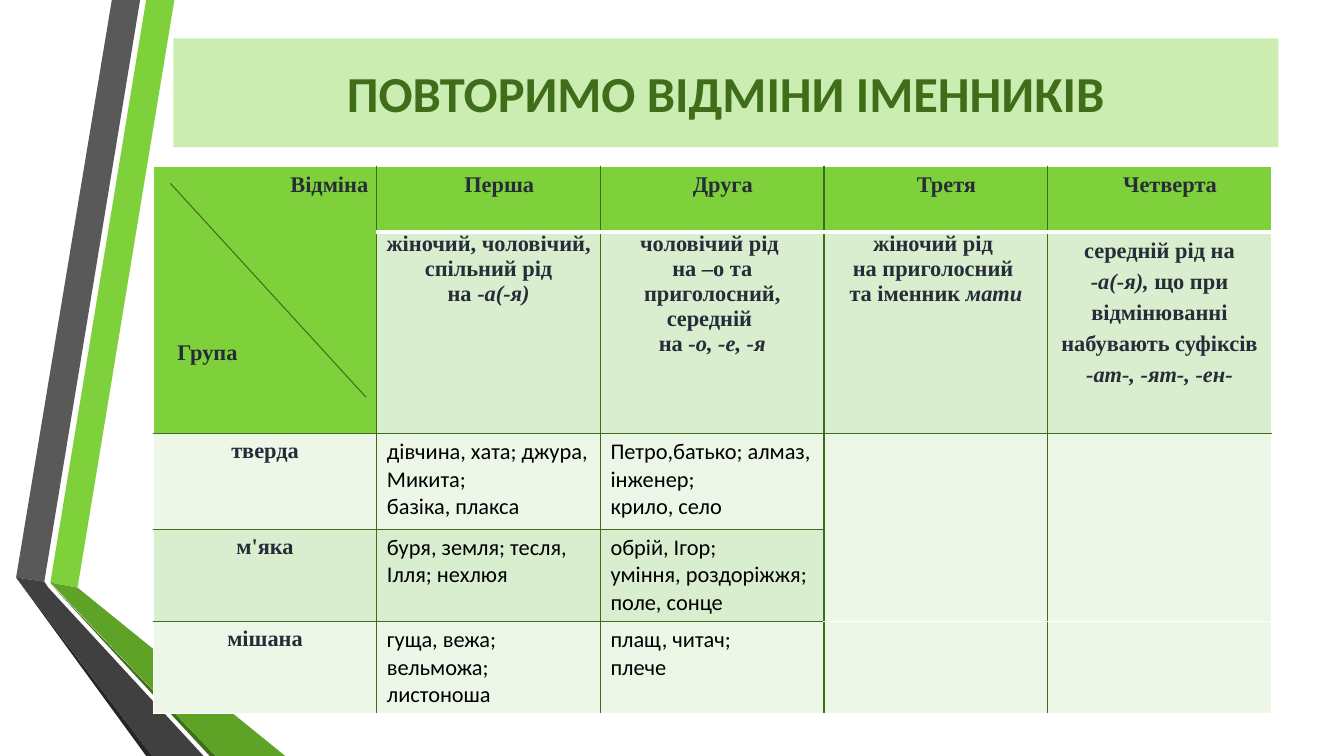
import pptx
import pptx.dml.color
import pptx.enum.shapes
import pptx.enum.text
import pptx.oxml.ns
import pptx.util
from lxml import etree

Inches, Pt = pptx.util.Inches, pptx.util.Pt
ALIGN = pptx.enum.text.PP_ALIGN

GREEN, DARK_GREEN, INK = "7FD13B", "3F6D19", "272D38"
MEDIUM, PALE, WHITE, BLACK = "D8EECE", "ECF7E8", "FFFFFF", "000000"

RIBBONS = [
    (GREEN, [(0.5, 5.78), (0.77, 5.83), (1.73, 0), (1.45, 0)]),
    ("595959", [(1.39, 0), (1.11, 0), (0.16, 5.73), (0.44, 5.77)]),
    ("262626", [(0.16, 5.73), (1.45, 7.5), (1.51, 7.5)]),
    (DARK_GREEN, [(0.5, 5.79), (2.08, 7.5), (2.14, 7.5)]),
    ("5FA326", [(0.5, 5.78), (2.14, 7.5), (2.83, 7.5), (0.77, 5.83)]),
    ("404040", [(2.02, 7.5), (0.48, 5.83), (0.44, 5.77), (0.16, 5.73), (1.51, 7.5)]),
]

TITLE = "ПОВТОРИМО ВІДМІНИ ІМЕННИКІВ"
CORNER = ["Відміна ", "Група"]
DECLENSIONS = ["Перша", "Друга", "Третя", "Четверта"]
# Asterisks enclose italic words.
RULES = [
    ["жіночий, чоловічий, спільний рід", "на *-а(-я)*"],
    ["чоловічий рід ", "на –о та приголосний, середній ", "на *-о, -е, -я*"],
    ["жіночий рід ", "на приголосний ", "та іменник *мати*"],
    ["середній рід на\n*-а(-я),* що при відмінюванні набувають суфіксів *-ат-, -ят-, -ен-*"],
]
GROUPS = [
    ("тверда", ["дівчина, хата; джура, Микита;", "базіка, плакса"],
     ["Петро,батько; алмаз, інженер;", "крило, село"]),
    ("м'яка", ["буря, земля; тесля, Ілля; нехлюя"],
     ["обрій, Ігор;", "уміння, роздоріжжя;", "поле, сонце"]),
    ("мішана", ["гуща, вежа; вельможа; листоноша"], ["плащ, читач;", "плече"]),
]
ROW_HEIGHTS = [0.65, 2.0, 0.95, 0.91, 0.91]
ROW_FILLS = [GREEN, MEDIUM, PALE, MEDIUM, PALE]
COLUMNS = 5
COLUMN_WIDTH = 2.218
MERGES = [((0, 0), (1, 0)), ((2, 3), (3, 3)), ((2, 4), (3, 4))]


def paint(target, color):
    target.solid()
    target.fore_color.rgb = pptx.dml.color.RGBColor.from_string(color)


def add_span(para, text, size, font, color, bold, italic=False):
    span = para.add_run()
    span.text = text
    span.font.size = Pt(size)
    span.font.name = font
    span.font.bold = bold
    span.font.italic = italic
    paint(span.font.fill, color)


def write_cell(cell, lines, align=ALIGN.CENTER, body=False, loose=False, indent=0):
    style = (16, "Calibri", BLACK, False) if body else (16, "Times New Roman", INK, True)
    frame = cell.text_frame
    for number, line in enumerate(lines):
        para = frame.add_paragraph() if number else frame.paragraphs[0]
        para.alignment = align
        if loose:
            para.line_spacing = 1.25
            para.space_before = Pt(2)
        if indent:
            properties = para._p.get_or_add_pPr()
            properties.set("marL", "0")
            properties.set("indent", str(Inches(indent)))
        for part_number, part in enumerate(line.split("*")):
            for piece_number, piece in enumerate(part.split("\n")):
                if piece_number:
                    para.add_line_break()
                if piece:
                    add_span(para, piece, *style, italic=part_number % 2 == 1)


def horizontal_border(boundary, column):
    if boundary == 1:
        return WHITE, 3
    white = boundary in (0, len(ROW_HEIGHTS)) or (boundary == 4 and column > 2)
    return (WHITE if white else DARK_GREEN), 1


def vertical_border(boundary):
    return (WHITE if boundary in (0, COLUMNS) else DARK_GREEN), 1


def add_borders(cell, row, column):
    bottom = row + (cell.span_height if cell.is_merge_origin else 1)
    borders = {
        "a:lnL": vertical_border(column),
        "a:lnR": vertical_border(column + 1),
        "a:lnT": horizontal_border(row, column),
        "a:lnB": horizontal_border(bottom, column),
    }
    qn = pptx.oxml.ns.qn
    properties = cell._tc.get_or_add_tcPr()
    for tag, (color, width) in borders.items():
        line = etree.SubElement(properties, qn(tag), w=str(Pt(width)))
        fill = etree.SubElement(line, qn("a:solidFill"))
        etree.SubElement(fill, qn("a:srgbClr"), val=color)


def add_ribbons(page):
    for color, corners in RIBBONS:
        points = [(Inches(x), Inches(y)) for x, y in corners]
        builder = page.shapes.build_freeform(*points[0])
        builder.add_line_segments(points[1:], close=True)
        ribbon = builder.convert_to_shape()
        ribbon.shadow.inherit = False
        paint(ribbon.fill, color)
        ribbon.line.fill.background()


def add_title(page):
    box = page.shapes.add_shape(pptx.enum.shapes.MSO_SHAPE.RECTANGLE,
                                Inches(1.72), Inches(0.38), Inches(10.96), Inches(1.08))
    box.shadow.inherit = False
    paint(box.fill, "CCEDB1")
    box.line.fill.background()
    box.text_frame.vertical_anchor = pptx.enum.text.MSO_ANCHOR.MIDDLE
    para = box.text_frame.paragraphs[0]
    para.alignment = ALIGN.CENTER
    add_span(para, TITLE, 36, "Calibri", DARK_GREEN, True)


def add_declension_table(page):
    table = page.shapes.add_table(
        len(ROW_HEIGHTS), COLUMNS, Inches(1.52), Inches(1.65),
        Inches(COLUMN_WIDTH * COLUMNS), Inches(sum(ROW_HEIGHTS))).table
    table.first_row = False
    table.horz_banding = False
    for column in table.columns:
        column.width = Inches(COLUMN_WIDTH)
    for row, height in zip(table.rows, ROW_HEIGHTS):
        row.height = Inches(height)
    for first, last in MERGES:
        table.cell(*first).merge(table.cell(*last))

    for row, color in enumerate(ROW_FILLS):
        for column in range(COLUMNS):
            cell = table.cell(row, column)
            if not cell.is_spanned:
                add_borders(cell, row, column)
            paint(cell.fill, PALE if row > 1 and column > 2 else color)
            if row < 2:
                cell.margin_left = cell.margin_right = Inches(0.03)
                cell.margin_top = cell.margin_bottom = 0

    corner = table.cell(0, 0)
    write_cell(corner, CORNER, ALIGN.LEFT, loose=True, indent=0.21)
    top, bottom = corner.text_frame.paragraphs
    top.alignment = ALIGN.RIGHT
    bottom.space_before = Pt(98)
    for column, (name, rule) in enumerate(zip(DECLENSIONS, RULES), start=1):
        write_cell(table.cell(0, column), [name], loose=True, indent=0.21)
        write_cell(table.cell(1, column), rule, loose=column == 4)
    for row, (group, *examples) in enumerate(GROUPS, start=2):
        write_cell(table.cell(row, 0), [group])
        for column, lines in enumerate(examples, start=1):
            write_cell(table.cell(row, column), lines, ALIGN.LEFT, body=True)


def add_diagonal(page):
    diagonal = page.shapes.add_connector(pptx.enum.shapes.MSO_CONNECTOR.STRAIGHT,
                                         Inches(1.69), Inches(1.82), Inches(3.63), Inches(3.94))
    paint(diagonal.line.fill, DARK_GREEN)
    diagonal.line.width = Pt(0.75)
    etree.SubElement(diagonal._element.spPr, pptx.oxml.ns.qn("a:effectLst"))


def main():
    deck = pptx.Presentation()
    deck.slide_width, deck.slide_height = Inches(13.33), Inches(7.5)
    page = deck.slides.add_slide(deck.slide_layouts[6])
    add_ribbons(page)
    add_title(page)
    add_declension_table(page)
    add_diagonal(page)
    deck.save("out.pptx")


if __name__ == "__main__":
    main()
